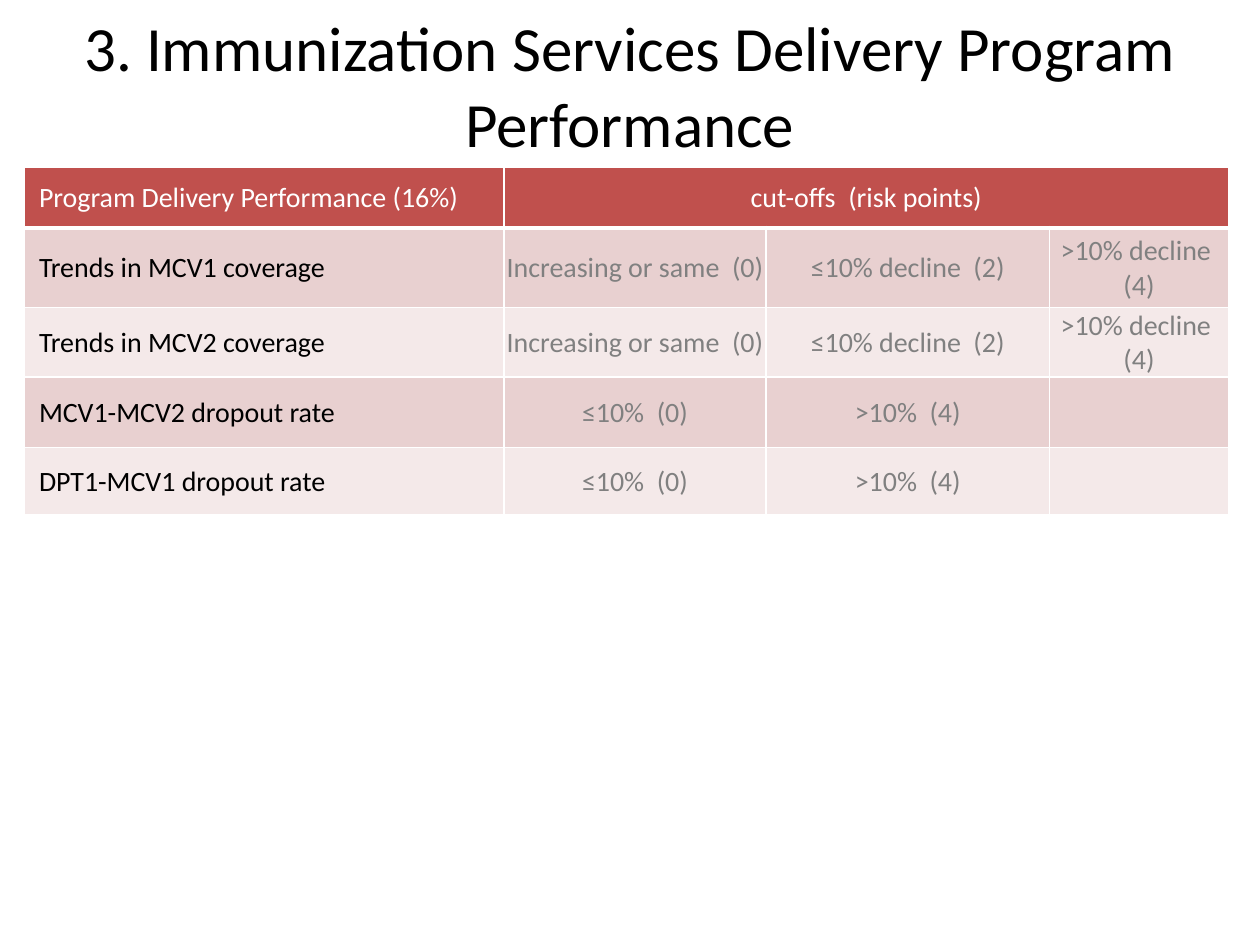
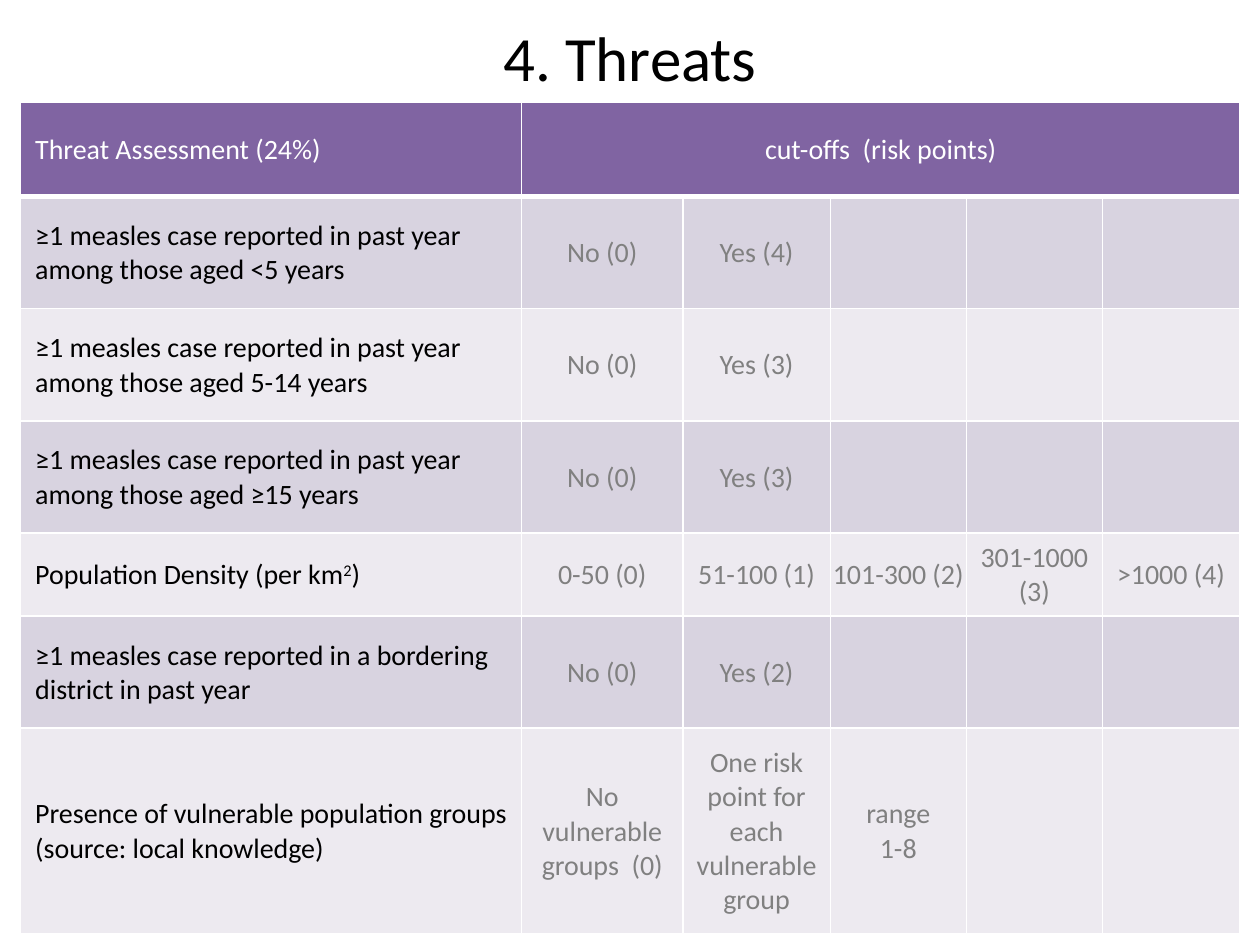
"""Build two slides of measles risk scoring tables."""
from lxml import etree
from pptx import Presentation
from pptx.dml.color import RGBColor
from pptx.enum import text
from pptx.oxml import ns
from pptx.util import Inches, Pt

FONT = "Calibri"
BLACK = RGBColor(0x00, 0x00, 0x00)
WHITE = RGBColor(0xFF, 0xFF, 0xFF)
GRAY = RGBColor(0x80, 0x80, 0x80)
RED_BANDS = (RGBColor(0xC0, 0x50, 0x4D), RGBColor(0xE8, 0xD0, 0xD0), RGBColor(0xF4, 0xE9, 0xE9))
PURPLE_BANDS = (RGBColor(0x80, 0x64, 0xA2), RGBColor(0xD8, 0xD3, 0xE0), RGBColor(0xED, 0xEA, 0xF0))
CUT_OFFS = "cut-offs  (risk points)"
TREND = ["Increasing or same  (0)", "≤10% decline  (2)", ">10% decline  (4)"]
DROPOUT = ["≤10%  (0)", ">10%  (4)"]
CASE = "≥1 measles case reported in"

PERFORMANCE = [
    ["Program Delivery Performance (16%)", CUT_OFFS],
    ["Trends in MCV1 coverage", *TREND],
    ["Trends in MCV2 coverage", *TREND],
    ["MCV1-MCV2 dropout rate", *DROPOUT],
    ["DPT1-MCV1 dropout rate", *DROPOUT],
]
THREATS = [
    ["Threat Assessment (24%)", CUT_OFFS],
    [f"{CASE} past year among those aged <5 years", "No (0)", "Yes (4)"],
    [f"{CASE} past year among those aged 5-14 years", "No (0)", "Yes (3)"],
    [f"{CASE} past year among those aged ≥15 years", "No (0)", "Yes (3)"],
    ["Population Density (per km^2^)", "0-50 (0)", "51-100 (1)", "101-300 (2)",
     "301-1000 (3)", ">1000 (4)"],
    [f"{CASE} a bordering district in past year", "No (0)", "Yes (2)"],
    ["Presence of vulnerable population groups (source: local knowledge)",
     "No vulnerable groups  (0)", "One risk point for each vulnerable group", "range\n1-8"],
]


def style_font(font, size, color):
    """Apply the deck's typeface with a size and colour."""
    font.name, font.size, font.bold = FONT, Pt(size), False
    font.color.rgb = color


def add_titled_slide(presentation, title, height):
    """Add a title-only slide with a centred title."""
    slide = presentation.slides.add_slide(presentation.slide_layouts[5])
    shape = slide.shapes.title
    shape.left, shape.top = Inches(0.5), Inches(0.01)
    shape.width, shape.height = Inches(9), Inches(height)
    frame = shape.text_frame
    frame.text = title
    frame.auto_size = text.MSO_AUTO_SIZE.NONE
    frame.vertical_anchor = text.MSO_ANCHOR.MIDDLE
    paragraph = frame.paragraphs[0]
    paragraph.alignment = text.PP_ALIGN.CENTER
    style_font(paragraph.runs[0].font, 36, BLACK)
    return slide


def add_header_borders(cell):
    """Draw white cell edges with a heavier bottom edge."""
    properties = cell._tc.get_or_add_tcPr()
    for side, points in (("L", 1), ("R", 1), ("T", 1), ("B", 3)):
        line = etree.SubElement(properties, ns.qn(f"a:ln{side}"), w=str(Pt(points)))
        fill = etree.SubElement(line, ns.qn("a:solidFill"))
        etree.SubElement(fill, ns.qn("a:srgbClr"), val=str(WHITE))


def write_paragraph(paragraph, content, color):
    """Write runs, raising the parts held between carets."""
    for index, part in enumerate(content.split("^")):
        run = paragraph.add_run()
        run.text = part
        style_font(run.font, 16, color)
        if index % 2:
            run._r.get_or_add_rPr().set("baseline", "30000")


def fill_cell(cell, content, is_label, color, background):
    """Fill a table cell with background, margins and text."""
    cell.fill.solid()
    cell.fill.fore_color.rgb = background
    cell.vertical_anchor = text.MSO_ANCHOR.MIDDLE
    cell.margin_left = Inches(0.12 if is_label else 0.01)
    cell.margin_right = cell.margin_top = Inches(0.01)
    cell.margin_bottom = 0
    frame = cell.text_frame
    for index, line in enumerate(content.split("\n") if content else []):
        paragraph = frame.add_paragraph() if index else frame.paragraphs[0]
        paragraph.alignment = text.PP_ALIGN.LEFT if is_label else text.PP_ALIGN.CENTER
        write_paragraph(paragraph, line, color)


def add_risk_table(slide, left, top, widths, heights, rows, bands):
    """Add a banded table whose header spans all cut-off columns."""
    table = slide.shapes.add_table(
        len(heights), len(widths), Inches(left), Inches(top),
        Inches(sum(widths)), Inches(sum(heights))).table
    for column, width in zip(table.columns, widths):
        column.width = Inches(width)
    for row, height in zip(table.rows, heights):
        row.height = Inches(height)
    header, *stripes = bands
    for row_index, contents in enumerate(rows):
        is_header = row_index == 0
        background = header if is_header else stripes[(row_index - 1) % 2]
        for column_index in range(len(widths)):
            cell = table.cell(row_index, column_index)
            content = contents[column_index] if column_index < len(contents) else ""
            is_label = column_index == 0
            color = WHITE if is_header else BLACK if is_label else GRAY
            if is_header:
                add_header_borders(cell)
            fill_cell(cell, content, is_label, color, background)
    table.cell(0, 1).merge(table.cell(0, len(widths) - 1))


def main():
    """Build and save the presentation."""
    presentation = Presentation()
    presentation.slide_width, presentation.slide_height = Inches(10), Inches(7.5)
    slide = add_titled_slide(
        presentation, "3. Immunization Services Delivery Program Performance", 1.32)
    add_risk_table(slide, 0.19, 1.33, [3.81, 2.08, 2.25, 1.42],
                   [0.48, 0.63, 0.55, 0.56, 0.53], PERFORMANCE, RED_BANDS)
    slide = add_titled_slide(presentation, "4. Threats", 0.88)
    add_risk_table(slide, 0.16, 0.81, [3.98, 1.28, 1.17, 1.08, 1.08, 1.09],
                   [0.75, 0.89, 0.89, 0.89, 0.66, 0.89, 1.63], THREATS, PURPLE_BANDS)
    presentation.save("out.pptx")


if __name__ == "__main__":
    main()
